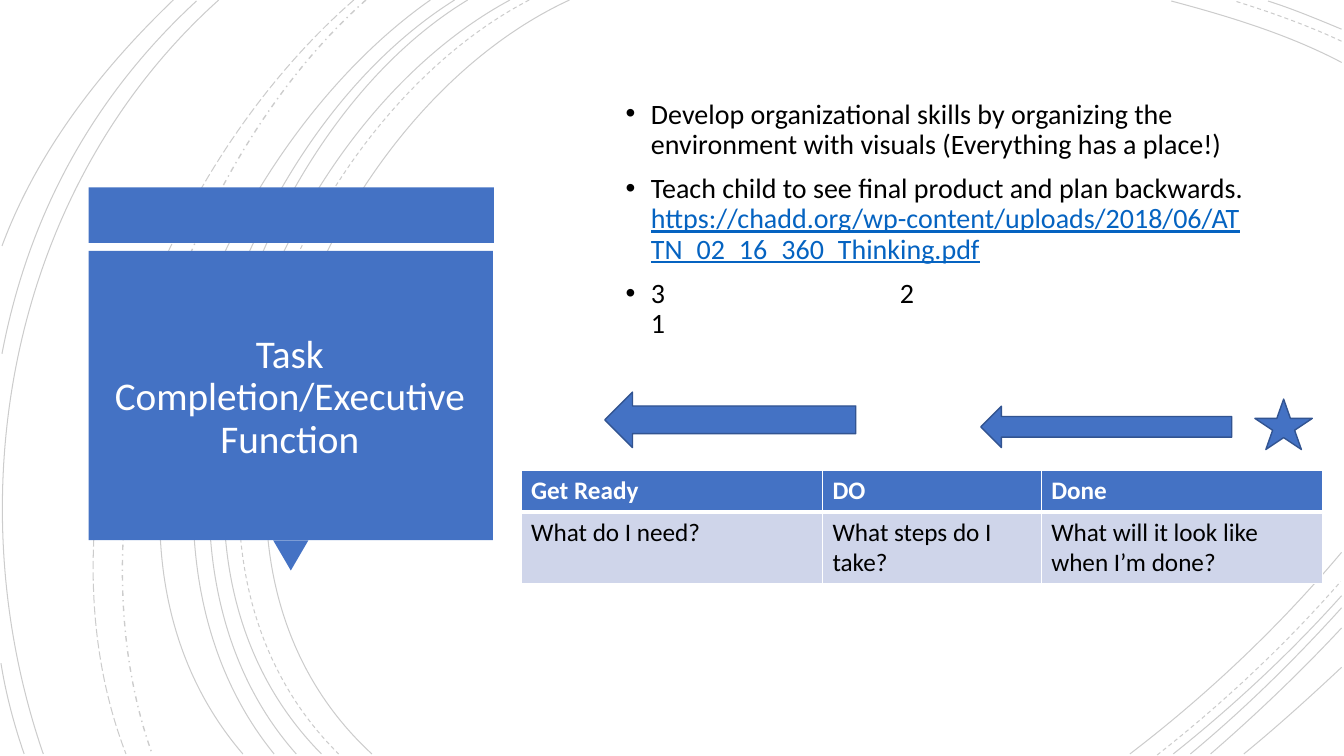
"""Build the task completion and executive function slide."""
from dataclasses import dataclass

from lxml import etree
from pptx import Presentation
from pptx.dml.color import RGBColor
from pptx.enum.dml import MSO_LINE
from pptx.enum.shapes import MSO_SHAPE
from pptx.enum.text import MSO_ANCHOR, PP_ALIGN
from pptx.oxml.ns import qn
from pptx.util import Emu, Pt

PX = 9144
SLIDE_WIDTH, SLIDE_HEIGHT = Emu(12192000), Emu(6858000)
FONT = "Calibri"
COLORS = {
    "accent": "4472C4",
    "edge": "325491",
    "pale": "CFD5EA",
    "link": "0563C1",
    "black": "000000",
    "white": "FFFFFF",
}
SOLID, DASH = MSO_LINE.SOLID, MSO_LINE.DASH
DASH_DOT, LONG_DASH = MSO_LINE.DASH_DOT, MSO_LINE.LONG_DASH
RECTANGLE, TRIANGLE = MSO_SHAPE.RECTANGLE, MSO_SHAPE.ISOSCELES_TRIANGLE
LEFT_ARROW, STAR = MSO_SHAPE.LEFT_ARROW, MSO_SHAPE.STAR_5_POINT
MIDDLE = MSO_ANCHOR.MIDDLE
LEFT, CENTER = PP_ALIGN.LEFT, PP_ALIGN.CENTER


@dataclass(frozen=True)
class Arc:
    """A cubic curve given by start, two controls and end."""
    points: tuple
    dash: MSO_LINE = SOLID
    weight: float = 0.75


@dataclass(frozen=True)
class Block:
    """A preset shape with its place and look."""
    preset: MSO_SHAPE
    box: tuple
    edge: str = ""
    rotation: int = 0


@dataclass(frozen=True)
class Span:
    """A stretch of text with its colour and letter spacing in points."""
    text: str
    color: str = "black"
    underline: bool = False
    tracking: int = 0


ARCS = [
    Arc(((565, 0), (315, 115), (143, 540), (369, 748))),
    Arc(((1331, 62), (1278, 34), (1218, 16), (1162, 1))),
    Arc(((1121, 748), (1197, 690), (1269, 622), (1331, 548))),
    Arc(((525, 0), (285, 125), (123, 537), (336, 748)), DASH),
    Arc(((1331, 41), (1297, 25), (1260, 12), (1225, 1)), DASH),
    Arc(((1148, 749), (1213, 698), (1275, 640), (1330, 577)), DASH),
    Arc(((506, 0), (270, 127), (110, 537), (319, 748))),
    Arc(((1331, 29), (1307, 19), (1283, 9), (1258, 1))),
    Arc(((1164, 748), (1223, 701), (1280, 648), (1331, 591))),
    Arc(((464, 0), (244, 133), (110, 541), (294, 748))),
    Arc(((1181, 748), (1234, 704), (1284, 655), (1331, 603))),
    Arc(((451, 0), (231, 138), (97, 533), (272, 748))),
    Arc(((1201, 748), (1246, 709), (1290, 667), (1331, 623))),
    Arc(((427, 0), (217, 147), (53, 529), (241, 748))),
    Arc(((1234, 748), (1267, 721), (1299, 692), (1331, 662))),
    Arc(((363, 0), (176, 166), (65, 509), (151, 748)), DASH_DOT, 1),
    Arc(((351, 0), (157, 169), (29, 499), (125, 748)), LONG_DASH),
    Arc(((217, 0), (11, 185), (-46, 490), (43, 748))),
    Arc(((195, 1), (92, 96), (28, 214), (2, 351))),
    Arc(((1, 658), (6, 689), (14, 719), (24, 748))),
    Arc(((172, 0), (100, 69), (37, 150), (2, 244))),
]
TITLE_PANEL = [
    Block(RECTANGLE, (88, 186, 402, 55)),
    Block(TRIANGLE, (271, 536, 35, 30), rotation=180),
    Block(RECTANGLE, (88, 249, 401, 287)),
]
BACKWARD_STEPS = [
    Block(LEFT_ARROW, (600, 389, 249, 55), "edge"),
    Block(STAR, (1245, 396, 57, 50), "edge"),
    Block(LEFT_ARROW, (973, 403, 249, 41), "edge"),
]
ADVICE = [
    [Span("Develop organizational skills by organizing the environment "
          "with visuals (Everything has a place!)")],
    [Span("Teach child to see final product and plan backwards."),
     Span(" https://chadd.org/wp-content/uploads/2018/06/"
          "ATTN_02_16_360_Thinking.pdf", "link", True)],
    [Span("3"), Span(" 2", tracking=163), Span(" 1", tracking=181)],
]
PLAN_COLUMNS = [299, 217, 279]
PLAN_ROWS = [41, 71]
PLAN = [
    [["Get Ready"], ["DO"], ["Done"]],
    [["What do I need?"], ["What steps do I take?"],
     ["What will it look like", "when I’m done?"]],
]


def rgb(name: str) -> RGBColor:
    """Look up a palette colour."""
    return RGBColor.from_string(COLORS[name])


def emu(lengths: tuple) -> list:
    """Turn px lengths into EMU."""
    return [Emu(length * PX) for length in lengths]


def draw_arc(shapes, arc: Arc) -> None:
    """Draw a faint open curve."""
    builder = shapes.build_freeform(*arc.points[0], scale=PX)
    builder.add_line_segments(arc.points[1:], close=False)
    curve = builder.convert_to_shape()
    outline = next(curve.element.iter(qn("a:path")))
    bend = etree.SubElement(outline, qn("a:cubicBezTo"))
    for segment in outline.findall(qn("a:lnTo")):
        bend.append(segment[0])
        outline.remove(segment)
    curve.shadow.inherit = False
    curve.fill.background()
    curve.line.color.rgb = rgb("black")
    curve.line.width = Pt(arc.weight)
    curve.line.dash_style = arc.dash
    ink = curve.element.spPr.find(f"{qn('a:ln')}/{qn('a:solidFill')}/{qn('a:srgbClr')}")
    etree.SubElement(ink, qn("a:alpha"), val="20000")


def draw_block(shapes, block: Block) -> None:
    """Draw a filled preset shape."""
    shape = shapes.add_shape(block.preset, *emu(block.box))
    shape.shadow.inherit = False
    shape.rotation = block.rotation
    shape.fill.solid()
    shape.fill.fore_color.rgb = rgb("accent")
    if block.edge:
        shape.line.color.rgb = rgb(block.edge)
        shape.line.width = Pt(1)
    else:
        shape.line.fill.background()


def write(frame, paragraphs: list, *, size: int, bold: bool = False, align=LEFT,
          spacing: float = 1.0, before: int = 0, bullet: bool = False) -> None:
    """Fill a text frame with paragraphs of spans."""
    frame.word_wrap = True
    for index, spans in enumerate(paragraphs):
        paragraph = frame.paragraphs[0] if index == 0 else frame.add_paragraph()
        if bullet:
            properties = paragraph._p.get_or_add_pPr()
            properties.set("marL", str(25 * PX))
            properties.set("indent", str(-25 * PX))
            etree.SubElement(properties, qn("a:buFont"), typeface="Arial")
            etree.SubElement(properties, qn("a:buChar"), char="•")
        paragraph.alignment = align
        paragraph.line_spacing = spacing
        if index and before:
            paragraph.space_before = Pt(before)
        for span in spans:
            run = paragraph.add_run()
            run.text = span.text
            run.font.name, run.font.size, run.font.bold = FONT, Pt(size), bold
            run.font.color.rgb = rgb(span.color)
            run.font.underline = span.underline
            if span.tracking:
                run._r.get_or_add_rPr().set("spc", str(span.tracking * 100))


def add_frame(shapes, box: tuple):
    """Add a middle-anchored text box and return its frame."""
    frame = shapes.add_textbox(*emu(box)).text_frame
    frame.vertical_anchor = MIDDLE
    return frame


def draw_plan(shapes) -> None:
    """Draw the Get Ready, DO, Done table."""
    size = (sum(PLAN_COLUMNS), sum(PLAN_ROWS))
    plan = shapes.add_table(len(PLAN_ROWS), len(PLAN_COLUMNS), *emu((517, 467) + size)).table
    for column, width in zip(plan.columns, emu(PLAN_COLUMNS)):
        column.width = width
    for index, (row, height) in enumerate(zip(plan.rows, emu(PLAN_ROWS))):
        row.height = height
        header = index == 0
        for cell, lines in zip(row.cells, PLAN[index]):
            ink = "white" if header else "black"
            write(cell.text_frame, [[Span(line, ink)] for line in lines], size=18, bold=header)
            properties = cell._tc.get_or_add_tcPr()
            for side in ("lnL", "lnR", "lnT", "lnB"):
                thick = side == ("lnB" if header else "lnT")
                border = etree.SubElement(properties, qn(f"a:{side}"), w=str(Pt(3 if thick else 1)))
                fill = etree.SubElement(border, qn("a:solidFill"))
                etree.SubElement(fill, qn("a:srgbClr"), val=COLORS["white"])
            cell.fill.solid()
            cell.fill.fore_color.rgb = rgb("accent" if header else "pale")


def main() -> None:
    """Assemble and save the slide."""
    deck = Presentation()
    deck.slide_width, deck.slide_height = SLIDE_WIDTH, SLIDE_HEIGHT
    shapes = deck.slides.add_slide(deck.slide_layouts[6]).shapes
    for arc in ARCS:
        draw_arc(shapes, arc)
    for block in TITLE_PANEL:
        draw_block(shapes, block)
    write(add_frame(shapes, (99, 264, 377, 262)),
          [[Span("Task Completion/Executive Function", "white")]],
          size=28, align=CENTER, spacing=0.9)
    write(add_frame(shapes, (611, 89, 636, 258)), ADVICE,
          size=20, spacing=0.9, before=10, bullet=True)
    draw_plan(shapes)
    for block in BACKWARD_STEPS:
        draw_block(shapes, block)
    deck.save("out.pptx")


if __name__ == "__main__":
    main()
